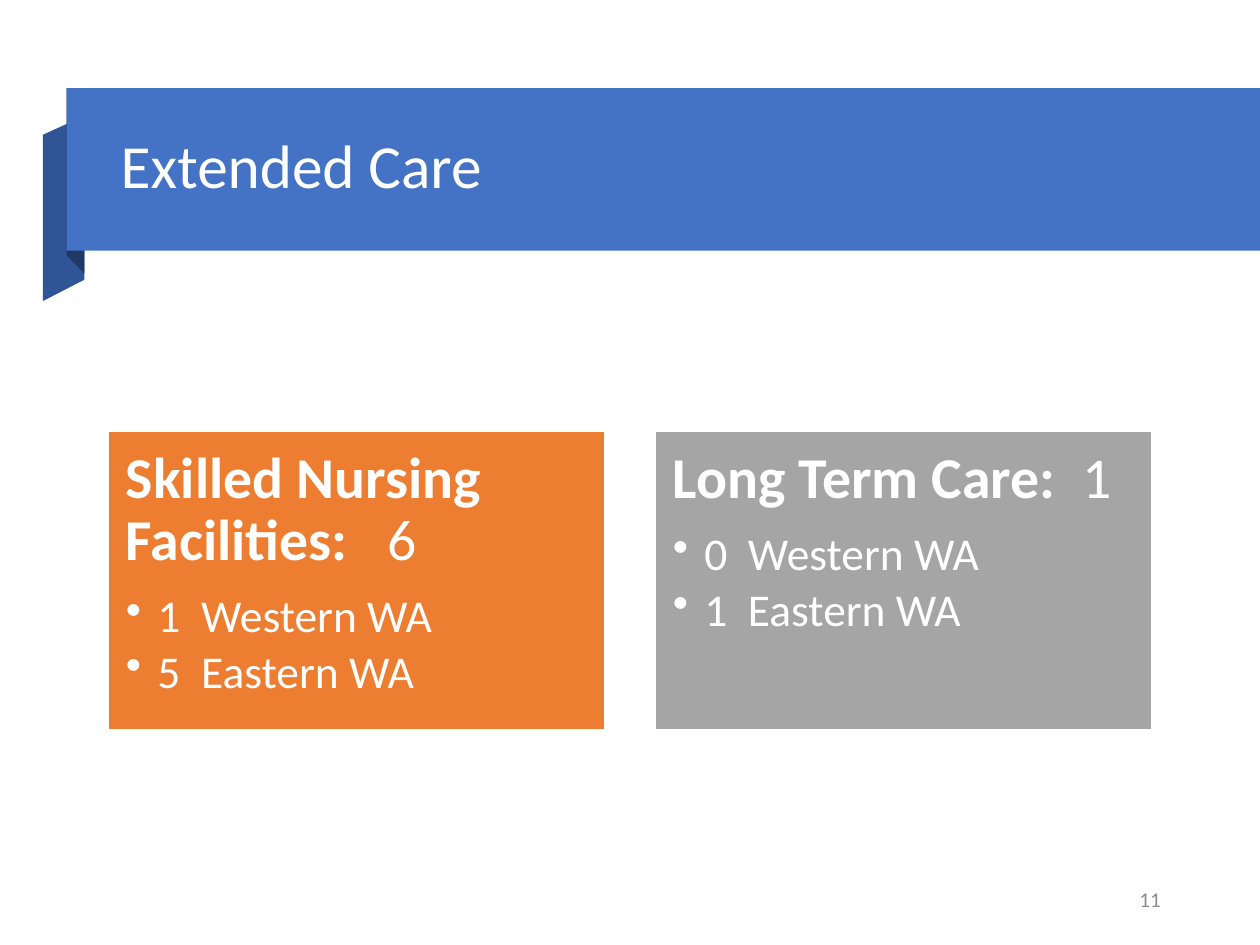
from lxml import etree
from pptx import Presentation
from pptx.dml.color import RGBColor
from pptx.enum.shapes import MSO_SHAPE
from pptx.enum.text import MSO_ANCHOR, PP_ALIGN
from pptx.oxml.ns import qn
from pptx.util import Inches, Pt

RECTANGLE = MSO_SHAPE.RECTANGLE
TOP, MIDDLE = MSO_ANCHOR.TOP, MSO_ANCHOR.MIDDLE
LEFT, RIGHT = PP_ALIGN.LEFT, PP_ALIGN.RIGHT
FONT = "Calibri"
WHITE = "FFFFFF"

RIBBON_FOLDS = [
    ("2F5597", [(0.67, 2.22), (0.34, 2.39), (0.34, 1.07), (0.67, 0.92)]),
    ("203864", [(0.67, 2.17), (0.53, 2.03), (0.53, 0.7), (0.67, 0.85)]),
]
CARE_CARDS = [
    ("ED7D31", "Skilled Nursing Facilities:   ", "6",
     ["1  Western WA", "5  Eastern WA"]),
    ("A5A5A5", "Long Term Care:  ", "1",
     ["0  Western WA", "1  Eastern WA"]),
]
CARD_LEFT, CARD_TOP, CARD_WIDTH, CARD_HEIGHT = 0.86, 3.42, 3.94, 2.37
CARD_PITCH = 4.34


def rgb(color):
    return RGBColor.from_string(color)


def paint(shape, fill, line=None):
    shape.shadow.inherit = False
    shape.fill.solid()
    shape.fill.fore_color.rgb = rgb(fill)
    if line:
        shape.line.color.rgb = rgb(line)
        shape.line.width = Pt(1)
    else:
        shape.line.fill.background()


def style_runs(paragraph, size, color=WHITE):
    for run in paragraph.runs:
        run.font.name = FONT
        run.font.size = Pt(size)
        run.font.color.rgb = rgb(color)


def add_rectangle(slide, left, top, width, height, fill, line=None):
    rectangle = slide.shapes.add_shape(
        RECTANGLE, Inches(left), Inches(top), Inches(width), Inches(height))
    paint(rectangle, fill, line)
    return rectangle


def add_fold(slide, fill, corners):
    points = [(Inches(x), Inches(y)) for x, y in corners]
    builder = slide.shapes.build_freeform(*points[0], scale=1.0)
    builder.add_line_segments(points[1:], close=True)
    paint(builder.convert_to_shape(), fill)


def add_label(slide, left, top, width, height, text, size, color, align=LEFT):
    frame = slide.shapes.add_textbox(
        Inches(left), Inches(top), Inches(width), Inches(height)).text_frame
    frame.word_wrap = True
    frame.vertical_anchor = MIDDLE
    frame.text = text
    label = frame.paragraphs[0]
    label.alignment = align
    label.line_spacing = 0.9
    style_runs(label, size, color)


def add_bullet(paragraph):
    properties = paragraph._p.get_or_add_pPr()
    properties.set("marL", str(Inches(0.25)))
    properties.set("indent", str(-Inches(0.25)))
    etree.SubElement(properties, qn("a:buChar")).set("char", "•")


def format_card_line(paragraph, size, space_after):
    paragraph.alignment = LEFT
    paragraph.line_spacing = 0.9
    paragraph.space_after = Pt(space_after)
    style_runs(paragraph, size)


def add_care_card(slide, left, fill, heading, total, regions):
    card = add_rectangle(
        slide, left, CARD_TOP, CARD_WIDTH, CARD_HEIGHT, fill, WHITE)
    frame = card.text_frame
    frame.word_wrap = True
    frame.vertical_anchor = TOP
    frame.margin_left = frame.margin_right = Inches(0.14)
    frame.margin_top = frame.margin_bottom = Inches(0.14)

    frame.text = heading
    title = frame.paragraphs[0]
    title.runs[0].font.bold = True
    count = title.add_run()
    count.text = total
    count.font.bold = False
    format_card_line(title, 33, 11.5)

    for region in regions:
        item = frame.add_paragraph()
        item.text = region
        item.level = 1
        add_bullet(item)
        format_card_line(item, 26, 3.9)


def main():
    deck = Presentation()
    deck.slide_width, deck.slide_height = Inches(10), Inches(7.5)
    slide = deck.slides.add_slide(deck.slide_layouts[6])

    for fill, corners in RIBBON_FOLDS:
        add_fold(slide, fill, corners)
    add_rectangle(slide, 0.53, 0.7, 9.47, 1.29, "4472C4")
    add_label(slide, 0.86, 0.86, 8.45, 0.96, "Extended Care", 35, WHITE)

    for column, card in enumerate(CARE_CARDS):
        add_care_card(slide, CARD_LEFT + column * CARD_PITCH, *card)
    add_label(slide, 7.06, 6.95, 2.25, 0.4, "11", 12, "8C8C8C", RIGHT)

    deck.save("out.pptx")


if __name__ == "__main__":
    main()
